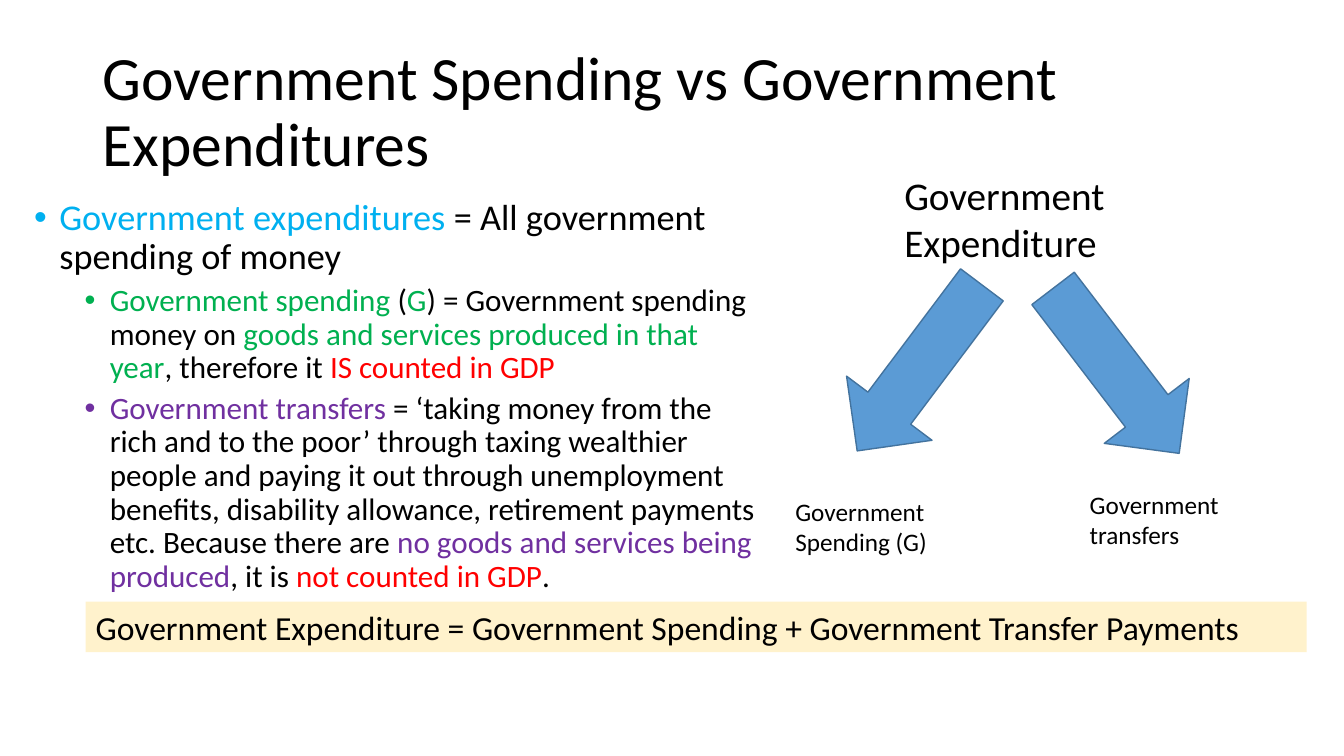
from pptx import Presentation
from pptx.dml.color import RGBColor as Rgb
from pptx.enum.shapes import MSO_SHAPE as Shape
from pptx.enum.text import MSO_ANCHOR as Anchor, PP_ALIGN as Align
from pptx.oxml.ns import qn
from pptx.util import Pt
from lxml.etree import SubElement as Sub

PX = 9144  # EMU per px, 100 px to the inch
FONT = "Calibri"
HUE = {
    "black": "000000", "sky": "00B0F0", "green": "00B050", "red": "FF0000",
    "purple": "7030A0", "blue": "5B9BD5", "edge": "43739E", "cream": "FFF2CC",
}

# Each point: level, then its runs as (text, colour)
POINTS = [
    (0, [("Government expenditures ", "sky"),
         ("= All government spending of money", "black")]),
    (1, [("Government spending ", "green"), ("(", "black"), ("G", "green"),
         (") = Government spending money on ", "black"),
         ("goods and services produced in that year", "green"),
         (", therefore it ", "black"), ("IS counted in GDP", "red")]),
    (1, [("Government transfers ", "purple"),
         ("= ‘taking money from the rich and to the poor’ through taxing "
          "wealthier people and paying it out through unemployment benefits, "
          "disability allowance, retirement payments etc. Because there are ",
          "black"),
         ("no goods and services being produced", "purple"),
         (", it is ", "black"), ("not counted in GDP", "red"),
         (".", "black")]),
]
# Size, space before and indent in px for each level
LEVELS = [(25.9, 10, 25), (22.2, 5, 75)]
HANG = 25


def emu(*nums):
    return [round(n * PX) for n in nums]


def color(name):
    return Rgb.from_string(HUE[name])


def add_run(para, text, size, hue="black"):
    run = para.add_run()
    run.text = text
    run.font.size = Pt(size)
    run.font.name = FONT
    run.font.color.rgb = color(hue)


def add_box(slide, box):
    frame = slide.shapes.add_textbox(*emu(*box)).text_frame
    frame.word_wrap = True
    return frame


def add_shape(slide, kind, box, fill, edge=None):
    shape = slide.shapes.add_shape(kind, *emu(*box))
    shape.shadow.inherit = False
    shape.fill.solid()
    shape.fill.fore_color.rgb = color(fill)
    if edge:
        shape.line.color.rgb = color(edge)
        shape.line.width = Pt(1)
    else:
        shape.line.fill.background()
    return shape


def add_label(slide, box, text, size):
    add_run(add_box(slide, box).paragraphs[0], text, size)


def add_title(slide, box):
    frame = add_box(slide, box)
    frame.vertical_anchor = Anchor.MIDDLE
    para = frame.paragraphs[0]
    para.line_spacing = 0.9
    add_run(para, "Government Spending vs Government Expenditures", 44)


def add_points(slide, box):
    frame = add_box(slide, box)
    for i, (level, runs) in enumerate(POINTS):
        size, gap, left = LEVELS[level]
        para = frame.add_paragraph() if i else frame.paragraphs[0]
        para.level = level
        para.line_spacing = 0.9
        para.space_before = Pt(gap)
        for text, hue in runs:
            add_run(para, text, size, hue)
        # Bullet with hanging indent
        props = para._p.get_or_add_pPr()
        props.set("marL", str(left * PX))
        props.set("indent", str(-HANG * PX))
        Sub(props, qn("a:buFont")).set("typeface", "Arial")
        Sub(props, qn("a:buChar")).set("char", "•")


def add_split(slide, box):
    x, y, _, _ = box
    add_label(slide, (x + 108, y, 318, 104), "Government Expenditure", 28)
    # Arrows from the whole to its two parts
    for dx, dy, turn in ((30, 147, 126.9), (225, 150, 52.6)):
        arrow = add_shape(slide, Shape.RIGHT_ARROW,
                          (x + dx, y + dy, 206, 106), "blue", "edge")
        arrow.rotation = turn
    # The two parts
    for dx, dy, text in ((292, 315, "Government transfers"),
                         (0, 322, "Government Spending (G)")):
        add_label(slide, (x + dx, y + dy, 226, 71), text, 18)


def add_sum(slide, box):
    frame = add_shape(slide, Shape.RECTANGLE, box, "cream").text_frame
    frame.word_wrap = True
    frame.vertical_anchor = Anchor.TOP
    para = frame.paragraphs[0]
    para.alignment = Align.LEFT
    add_run(para, "Government Expenditure = Government Spending + "
                  "Government Transfer Payments", 24)


def main():
    deck = Presentation()
    deck.slide_width, deck.slide_height = emu(1333, 750)
    slide = deck.slides.add_slide(deck.slide_layouts[6])
    add_title(slide, (92, 40, 1150, 145))
    add_points(slide, (24, 193, 738, 436))
    add_split(slide, (779, 165, 518, 393))
    add_sum(slide, (85, 597, 1211, 50))
    deck.save("out.pptx")


if __name__ == "__main__":
    main()
